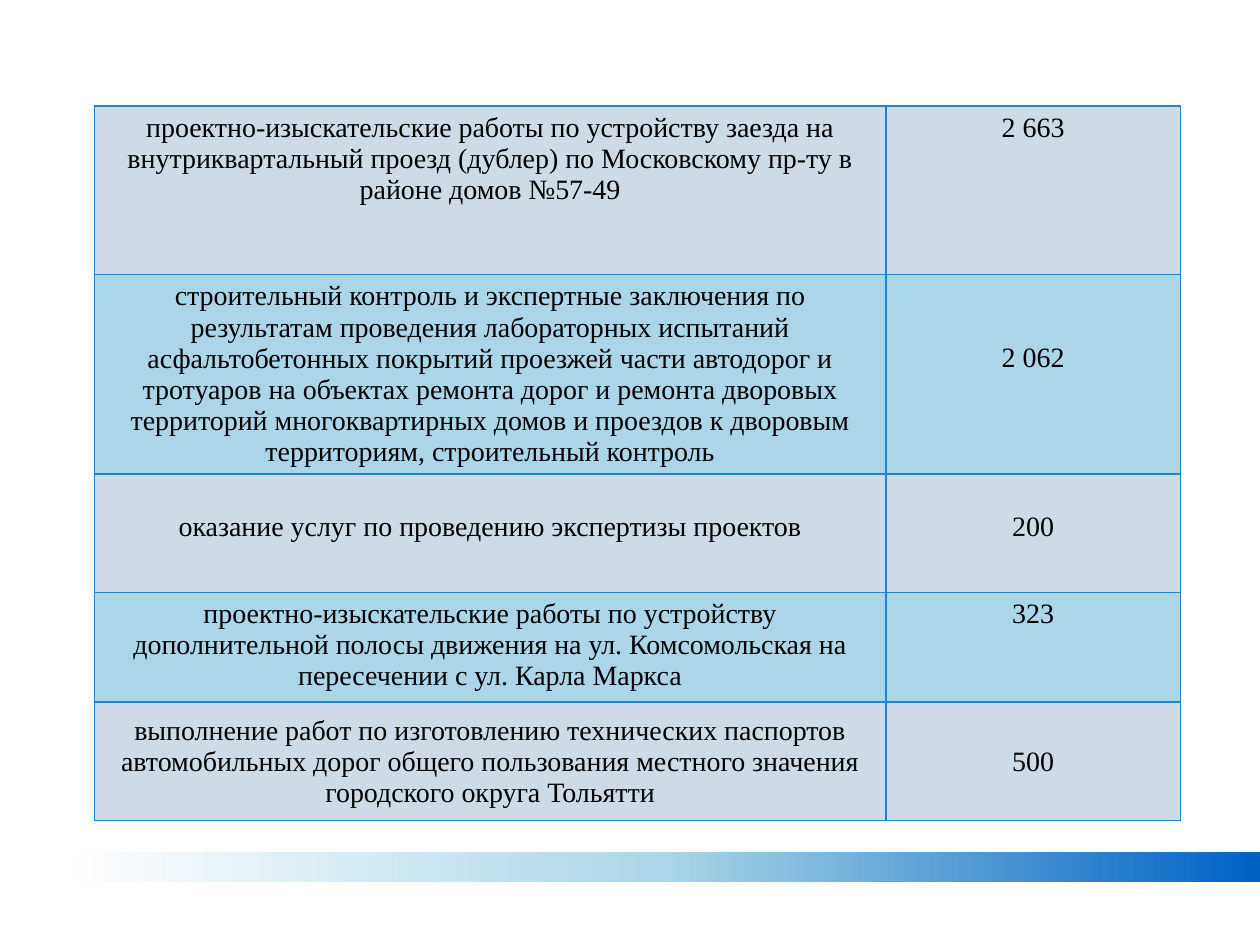
from copy import deepcopy

from lxml.etree import SubElement
from pptx import Presentation
from pptx.dml.color import RGBColor
from pptx.enum.shapes import MSO_SHAPE
from pptx.enum.text import MSO_ANCHOR, PP_ALIGN
from pptx.oxml.ns import qn
from pptx.util import Inches, Pt

COLORS = {
    "text": "000000",
    "border": "2683C6",
    "odd_row": "CEDBE6",
    "even_row": "AAD6E7",
    "bar_start": "FFFFFF",
    "bar_middle": "AAD6E7",
    "bar_end": "0062C4",
}
FONT = "Times New Roman"
COL_WIDTHS = (6.28, 2.34)
TOP, MIDDLE = MSO_ANCHOR.TOP, MSO_ANCHOR.MIDDLE

# Height, anchor, top margins of both cells, work, cost
ROWS = (
    (1.34, TOP, (0.05, 0.05),
     "проектно-изыскательские работы по устройству заезда на внутриквартальный "
     "проезд (дублер) по Московскому пр-ту в районе домов №57-49", "2 663"),
    (1.58, TOP, (0.05, 0.54),
     "строительный контроль и экспертные заключения по результатам проведения "
     "лабораторных испытаний асфальтобетонных покрытий проезжей части автодорог "
     "и тротуаров на объектах ремонта дорог и ремонта дворовых территорий "
     "многоквартирных домов и проездов к дворовым территориям, "
     "строительный контроль", "2 062"),
    (0.94, TOP, (0.3, 0.3),
     "оказание услуг по проведению экспертизы проектов", "200"),
    (0.87, TOP, (0.05, 0.05),
     "проектно-изыскательские работы по устройству дополнительной полосы движения "
     "на ул. Комсомольская на пересечении с ул. Карла Маркса", "323"),
    (0.94, MIDDLE, (0.01, 0.01),
     "выполнение работ по изготовлению технических паспортов автомобильных дорог "
     "общего пользования местного значения городского округа Тольятти", "500"),
)


def rgb(name):
    """Return the palette colour of that name."""
    return RGBColor.from_string(COLORS[name])


def set_borders(cell):
    """Draw a one-point line on every side of a cell."""
    tcPr = cell._tc.get_or_add_tcPr()
    for i, side in enumerate(("lnL", "lnR", "lnT", "lnB")):
        ln = SubElement(tcPr, qn(f"a:{side}"), w=str(Pt(1)))
        fill = SubElement(ln, qn("a:solidFill"))
        SubElement(fill, qn("a:srgbClr"), val=COLORS["border"])
        tcPr.insert(i, ln)


def format_cell(cell, text, fill, anchor, margin_top):
    """Fill in one table cell and style it."""
    cell.text_frame.text = text
    cell.fill.solid()
    cell.fill.fore_color.rgb = rgb(fill)
    cell.vertical_anchor = anchor
    cell.margin_top = Inches(margin_top)
    if anchor == MIDDLE:
        cell.margin_left = cell.margin_right = Inches(0.01)
        cell.margin_bottom = 0
    p = cell.text_frame.paragraphs[0]
    p.alignment = PP_ALIGN.CENTER
    font = p.runs[0].font
    font.name, font.size, font.bold = FONT, Pt(16), False
    font.color.rgb = rgb("text")
    set_borders(cell)


def add_cost_table(slide, left, top, width, height):
    """Place the table of works and their costs."""
    box = [Inches(v) for v in (left, top, width, height)]
    table = slide.shapes.add_table(len(ROWS), len(COL_WIDTHS), *box).table
    table.first_row = False
    for col, col_width in zip(table.columns, COL_WIDTHS):
        col.width = Inches(col_width)
    for i, (row_height, anchor, margins, *texts) in enumerate(ROWS):
        table.rows[i].height = Inches(row_height)
        fill = "even_row" if i % 2 else "odd_row"
        for j, (text, margin) in enumerate(zip(texts, margins)):
            format_cell(table.cell(i, j), text, fill, anchor, margin)


def add_gradient_bar(slide, left, top, width, height):
    """Place the bar that fades from white to blue."""
    box = [Inches(v) for v in (left, top, width, height)]
    s = slide.shapes.add_shape(MSO_SHAPE.RECTANGLE, *box)
    s.shadow.inherit = False
    s.line.fill.background()
    s.fill.gradient()
    s.fill.gradient_angle = 0
    stops = s._element.spPr.find(qn("a:gradFill")).find(qn("a:gsLst"))
    stops.append(deepcopy(stops[0]))
    names = ("bar_start", "bar_middle", "bar_end")
    for i, (stop, name) in enumerate(zip(s.fill.gradient_stops, names)):
        stop.position = i / 2
        stop.color.rgb = rgb(name)


def main():
    """Build the slide and save it."""
    prs = Presentation()
    prs.slide_width, prs.slide_height = Inches(10), Inches(7.5)
    slide = prs.slides.add_slide(prs.slide_layouts[6])
    add_cost_table(slide, 0.75, 0.84, sum(COL_WIDTHS), sum(r[0] for r in ROWS))
    add_gradient_bar(slide, 0.51, 6.76, 9.49, 0.24)
    prs.save("out.pptx")


if __name__ == "__main__":
    main()
